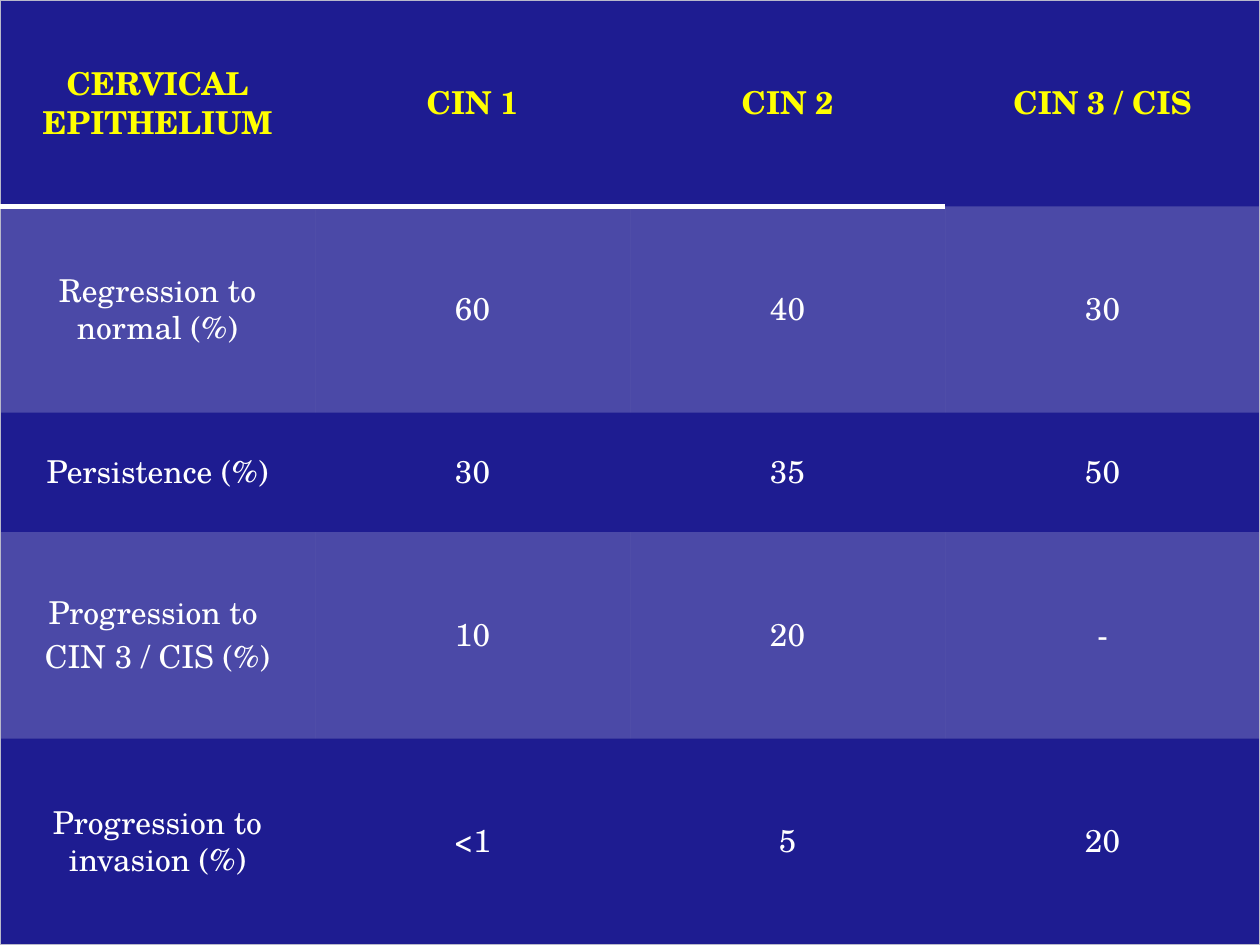
from dataclasses import dataclass

from lxml.etree import SubElement
from pptx import Presentation
from pptx.dml.color import RGBColor
from pptx.enum.text import MSO_ANCHOR, PP_ALIGN
from pptx.oxml.ns import qn
from pptx.util import Inches, Pt


@dataclass(frozen=True)
class Theme:
    font: str = "TeX Gyre Schola"
    size: int = 18
    background: str = "1E1C91"
    heading: str = "FFFF00"
    text: str = "FFFFFF"
    band: str = "FFFFFF"
    band_opacity: int = 20
    frame: str = "B9B9CB"
    frame_width: float = 0.75
    rule: str = "FFFFFF"
    rule_width: float = 3


THEME = Theme()
WIDTH, HEIGHT = 10, 7.5
NO_STYLE = "{2D5ABB26-0587-4C30-8999-92F81FD0307C}"

ROWS = [
    ["CERVICAL EPITHELIUM", "CIN 1", "CIN 2", "CIN 3 / CIS"],
    ["Regression to normal (%)", "60", "40", "30"],
    ["Persistence (%)", "30", "35", "50"],
    ["Progression to \nCIN 3 / CIS (%)", "10", "20", "-"],
    ["Progression to invasion (%)", "<1", "5", "20"],
]
ROW_WEIGHTS = [1.64, 1.64, 0.95, 1.64, 1.64]
LAST_ROW, LAST_COLUMN = len(ROWS) - 1, len(ROWS[0]) - 1


def add_border(cell, side, color, width):
    """Draw one cell side: L, R, T or B."""
    line = SubElement(cell._tc.get_or_add_tcPr(), qn(f"a:ln{side}"), w=str(Pt(width)))
    fill = SubElement(line, qn("a:solidFill"))
    SubElement(fill, qn("a:srgbClr"), val=color)


def add_borders(cell, row, column):
    """Frame the table's outside and rule off the header's first three columns."""
    frame = (THEME.frame, THEME.frame_width)
    if column == 0:
        add_border(cell, "L", *frame)
    if column == LAST_COLUMN:
        add_border(cell, "R", *frame)
    if row == 0:
        add_border(cell, "T", *frame)
        if column < LAST_COLUMN:
            add_border(cell, "B", THEME.rule, THEME.rule_width)
    if row == LAST_ROW:
        add_border(cell, "B", *frame)


def fill_cell(cell, banded):
    if not banded:
        cell.fill.background()
        return
    cell.fill.solid()
    cell.fill.fore_color.rgb = RGBColor.from_string(THEME.band)
    color = cell._tc.tcPr.find(f".//{qn('a:solidFill')}[last()]/{qn('a:srgbClr')}")
    for solid in cell._tc.tcPr.findall(qn("a:solidFill")):
        color = solid.find(qn("a:srgbClr"))
    SubElement(color, qn("a:alpha"), val=str(THEME.band_opacity * 1000))


def write_cell(cell, text, is_header):
    cell.text_frame.text = text
    cell.vertical_anchor = MSO_ANCHOR.MIDDLE
    for index, paragraph in enumerate(cell.text_frame.paragraphs):
        paragraph.alignment = PP_ALIGN.CENTER
        paragraph.line_spacing = 0.8
        if index:
            paragraph.space_before = Pt(0.2 * THEME.size)
        for run in paragraph.runs:
            run.font.name = THEME.font
            run.font.size = Pt(THEME.size)
            run.font.bold = is_header
            run.font.color.rgb = RGBColor.from_string(
                THEME.heading if is_header else THEME.text
            )


def add_outcome_table(slide):
    table = slide.shapes.add_table(
        len(ROWS), len(ROWS[0]), 0, 0, Inches(WIDTH), Inches(HEIGHT)
    ).table
    table._tbl.tblPr.find(qn("a:tableStyleId")).text = NO_STYLE
    for table_row, weight in zip(table.rows, ROW_WEIGHTS):
        table_row.height = Inches(HEIGHT * weight / sum(ROW_WEIGHTS))
    for row, texts in enumerate(ROWS):
        for column, text in enumerate(texts):
            cell = table.cell(row, column)
            write_cell(cell, text, is_header=row == 0)
            add_borders(cell, row, column)
            fill_cell(cell, banded=row % 2 == 1)


def main():
    presentation = Presentation()
    presentation.slide_width = Inches(WIDTH)
    presentation.slide_height = Inches(HEIGHT)
    slide = presentation.slides.add_slide(presentation.slide_layouts[6])
    slide.background.fill.solid()
    slide.background.fill.fore_color.rgb = RGBColor.from_string(THEME.background)
    add_outcome_table(slide)
    presentation.save("out.pptx")


if __name__ == "__main__":
    main()
